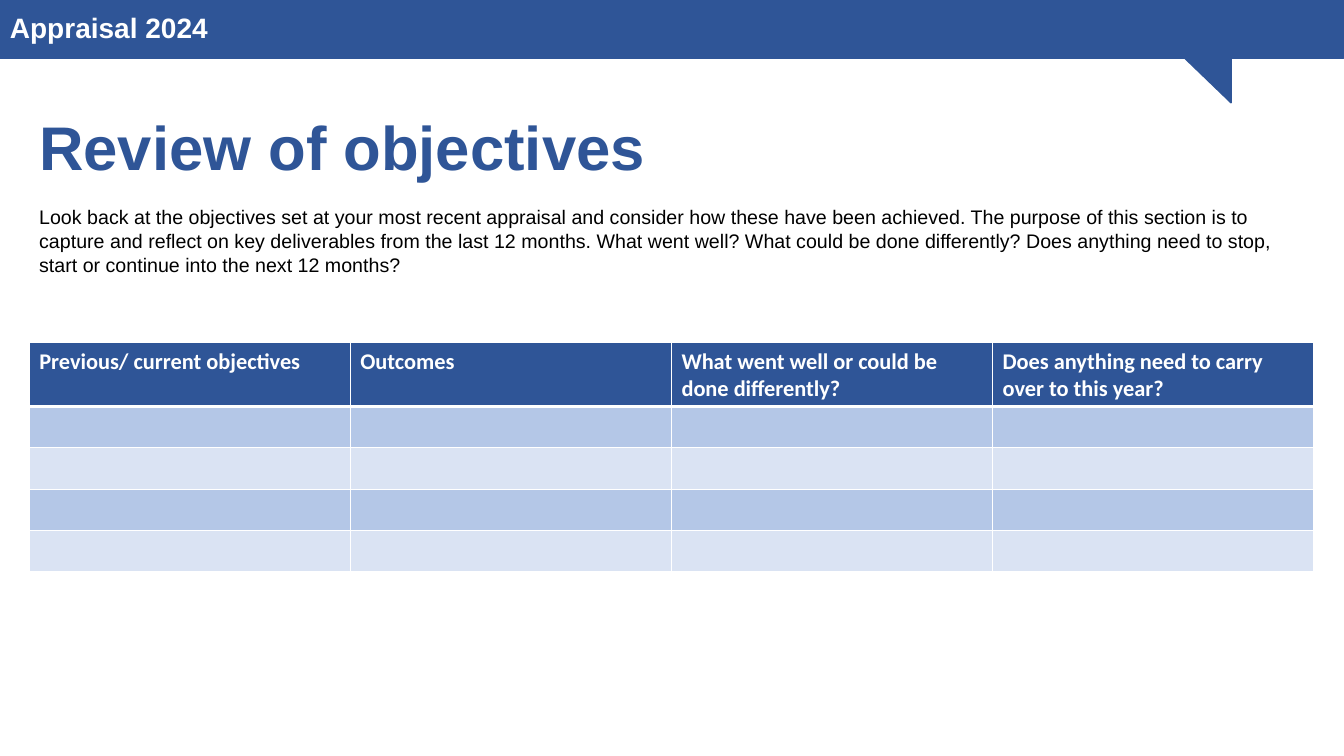
"""Build the appraisal slide reviewing last year's objectives."""

from dataclasses import dataclass

from lxml.etree import SubElement
from pptx import Presentation
from pptx.dml.color import RGBColor
from pptx.enum.shapes import MSO_SHAPE
from pptx.enum.text import MSO_ANCHOR
from pptx.oxml.ns import qn
from pptx.slide import Slide
from pptx.table import _Cell
from pptx.text.text import _Paragraph
from pptx.util import Inches, Pt


@dataclass(frozen=True)
class Theme:
    """Colours, fonts and type sizes of the slide."""

    navy: str = "2F5597"
    white: str = "FFFFFF"
    black: str = "000000"
    bands: tuple[str, str] = ("B4C7E7", "DAE3F3")
    text_font: str = "Arial"
    table_font: str = "Calibri"
    banner_size: float = 20
    heading_size: float = 44
    body_size: float = 14
    table_size: float = 16


@dataclass(frozen=True)
class Block:
    """A filled shape of the banner."""

    shape: MSO_SHAPE
    left: float
    top: float
    width: float
    height: float
    outline: float
    rotation: float = 0
    text: str = ""


THEME = Theme()
BANNER = (
    Block(MSO_SHAPE.RECTANGLE, 0, 0, 13.33, 0.58, 0.75, text="Appraisal 2024"),
    Block(MSO_SHAPE.RIGHT_TRIANGLE, 11.66, 0.49, 0.55, 0.53, 1, rotation=180),
)
HEADING = "Review of objectives"
GUIDANCE = (
    "Look back at the objectives set at your most recent appraisal and consider "
    "how these have been achieved. The purpose of this section is to capture and "
    "reflect on key deliverables from the last 12 months. What went well? What "
    "could be done differently? Does anything need to stop, start or continue "
    "into the next 12 months?"
)
COLUMNS = (
    "Previous/ current objectives",
    "Outcomes",
    "What went well or could be done differently?",
    "Does anything need to carry over to this year?",
)
OBJECTIVE_ROWS = 4
HEADER_HEIGHT = 0.62
ROW_HEIGHT = 0.41
TABLE_WIDTH = 12.74


def write(
    paragraph: _Paragraph,
    text: str,
    *,
    size: float,
    color: str,
    font: str = THEME.text_font,
    bold: bool = False,
    line_spacing: float | None = None,
    space_before: float = 0,
) -> None:
    """Add formatted text to a paragraph."""
    run = paragraph.add_run()
    run.text = text
    run.font.name = font
    run.font.size = Pt(size)
    run.font.bold = bold
    run.font.color.rgb = RGBColor.from_string(color)
    paragraph.line_spacing = line_spacing
    paragraph.space_before = Pt(space_before)


def draw_block(slide: Slide, block: Block) -> None:
    """Draw one part of the banner."""
    part = slide.shapes.add_shape(
        block.shape, Inches(block.left), Inches(block.top), Inches(block.width), Inches(block.height)
    )
    part.rotation = block.rotation
    part.shadow.inherit = False
    part.fill.solid()
    part.fill.fore_color.rgb = RGBColor.from_string(THEME.navy)
    part.line.color.rgb = RGBColor.from_string(THEME.navy)
    part.line.width = Pt(block.outline)
    if block.text:
        part.text_frame.vertical_anchor = MSO_ANCHOR.MIDDLE
        title = part.text_frame.paragraphs[0]
        title.alignment = 1
        write(title, block.text, size=THEME.banner_size, color=THEME.white, bold=True, line_spacing=0.9)


def draw_introduction(slide: Slide) -> None:
    """Draw the heading and the guidance under it."""
    introduction = slide.shapes.add_textbox(Inches(0.29), Inches(1.02), Inches(12.45), Inches(1.78)).text_frame
    introduction.word_wrap = True
    introduction.vertical_anchor = MSO_ANCHOR.MIDDLE
    write(introduction.paragraphs[0], HEADING, size=THEME.heading_size, color=THEME.navy, bold=True)
    write(introduction.add_paragraph(), GUIDANCE, size=THEME.body_size, color=THEME.black, space_before=16)


def style_cell(cell: _Cell, fill: str, borders: dict[str, float]) -> None:
    """Give a cell its white borders and its fill."""
    properties = cell._tc.get_or_add_tcPr()
    for side, width in borders.items():
        border = SubElement(properties, qn(f"a:ln{side}"), w=str(Pt(width)))
        SubElement(SubElement(border, qn("a:solidFill")), qn("a:srgbClr"), val=THEME.white)
    cell.fill.solid()
    cell.fill.fore_color.rgb = RGBColor.from_string(fill)


def draw_objectives(slide: Slide) -> None:
    """Draw the table with a header and empty banded rows."""
    height = HEADER_HEIGHT + OBJECTIVE_ROWS * ROW_HEIGHT
    objectives = slide.shapes.add_table(
        OBJECTIVE_ROWS + 1, len(COLUMNS), Inches(0.29), Inches(3.4), Inches(TABLE_WIDTH), Inches(height)
    ).table
    for column in objectives.columns:
        column.width = Inches(TABLE_WIDTH / len(COLUMNS))
    for index, row in enumerate(objectives.rows):
        row.height = Inches(ROW_HEIGHT if index else HEADER_HEIGHT)
        fill = THEME.bands[(index - 1) % 2] if index else THEME.navy
        borders = {"L": 1, "R": 1, "T": 3 if index == 1 else 1, "B": 1 if index else 3}
        for cell in row.cells:
            style_cell(cell, fill, borders)
    for label, cell in zip(COLUMNS, objectives.rows[0].cells):
        write(
            cell.text_frame.paragraphs[0],
            label,
            size=THEME.table_size,
            color=THEME.white,
            font=THEME.table_font,
            bold=True,
        )


def main() -> None:
    """Build and save the presentation."""
    presentation = Presentation()
    presentation.slide_width = Inches(13.33)
    presentation.slide_height = Inches(7.5)
    slide = presentation.slides.add_slide(presentation.slide_layouts[6])
    for block in BANNER:
        draw_block(slide, block)
    draw_introduction(slide)
    draw_objectives(slide)
    presentation.save("out.pptx")


if __name__ == "__main__":
    main()
